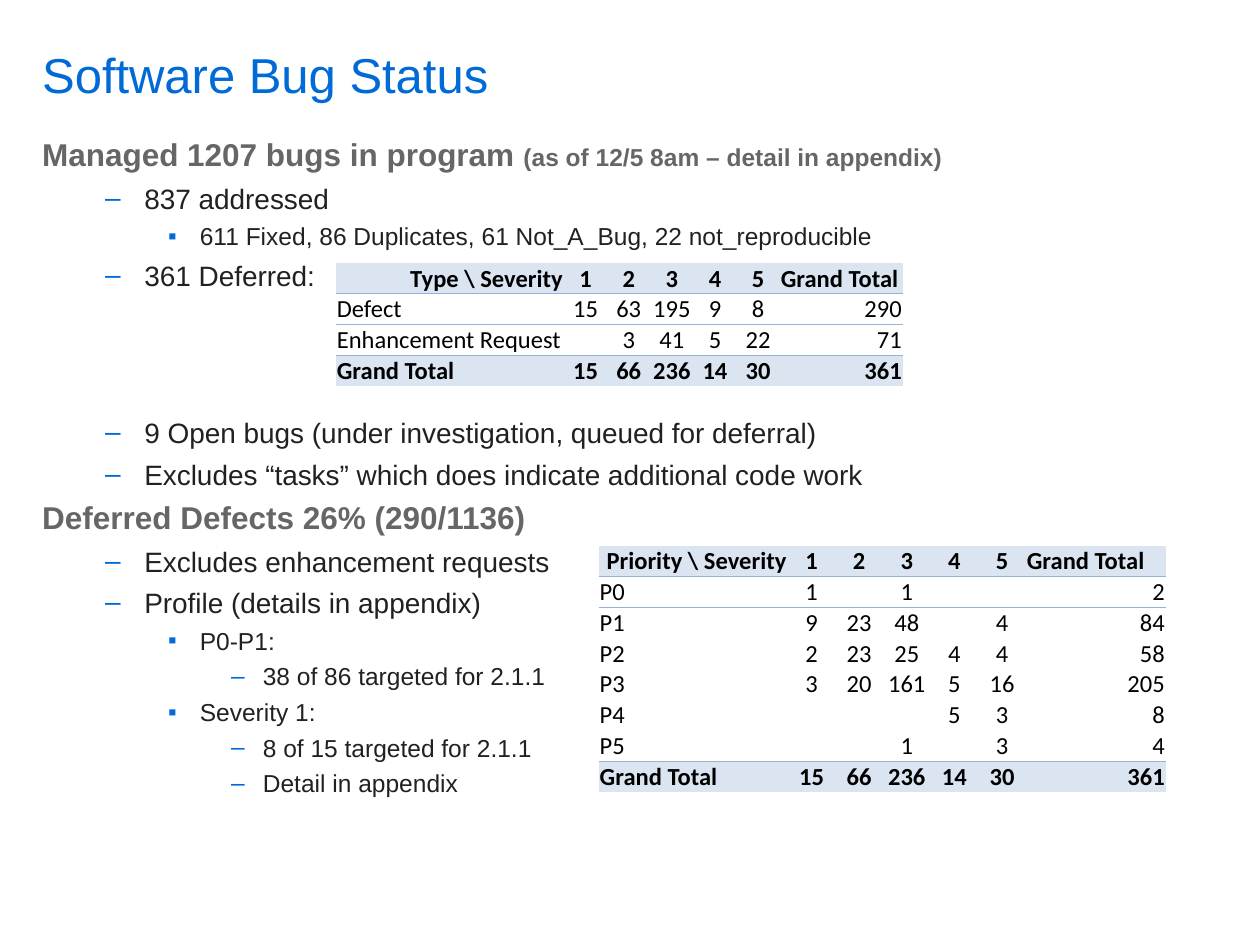
from dataclasses import dataclass
from lxml.etree import SubElement as Sub
from pptx import Presentation as Deck
from pptx.dml.color import RGBColor as Rgb
from pptx.enum.text import MSO_ANCHOR as Anchor, PP_ALIGN as Align
from pptx.oxml.ns import qn
from pptx.util import Cm, Pt


@dataclass(frozen=True)
class Theme:
    blue: str = "006AD6"
    gray: str = "666666"
    ink: str = "212121"
    black: str = "000000"
    band: str = "DBE5F1"
    rule: str = "95B3D7"
    sans: str = "Arial"
    grid: str = "Calibri"
    title: int = 28
    head: int = 18
    item: int = 16
    small: int = 14


LEVELS = {
    1: ("–", 2.06, 0.79),
    2: ("▪", 3.18, 0.64),
    3: ("–", 4.45, 0.64),
}
GAPS = {18: 4.5, 16: 4.5, 14: 3.6}
PLAIN = "{2D5ABB26-0587-4C30-8999-92F81FD0307C}"


class Page:
    def __init__(self, deck, theme):
        self.theme = theme
        self.slide = deck.slides.add_slide(deck.slide_layouts[5])

    def run(self, para, text, size, color, face, bold=False):
        run = para.add_run()
        run.text = text
        font = run.font
        font.size, font.name, font.bold = Pt(size), face, bold
        font.color.rgb = Rgb.from_string(color)

    def frame(self, shape, anchor):
        frame = shape.text_frame
        frame.word_wrap = True
        frame.vertical_anchor = anchor
        frame.margin_left = frame.margin_right = 0
        frame.margin_top = frame.margin_bottom = 0
        return frame

    def title(self, text, left, top, width, height):
        shape = self.slide.shapes.title
        shape.left, shape.top = Cm(left), Cm(top)
        shape.width, shape.height = Cm(width), Cm(height)
        para = self.frame(shape, Anchor.MIDDLE).paragraphs[0]
        para.alignment = Align.LEFT
        self.run(para, text, self.theme.title, self.theme.blue, self.theme.sans)

    def bullet(self, para, level):
        mark, left, hang = LEVELS[level]
        para.level = level
        props = para._p.get_or_add_pPr()
        props.set("marL", str(Cm(left)))
        props.set("indent", str(-Cm(hang)))
        tint = Sub(props, qn("a:buClr"))
        Sub(tint, qn("a:srgbClr"), val=self.theme.blue)
        Sub(props, qn("a:buFont"), typeface=self.theme.sans)
        Sub(props, qn("a:buChar"), char=mark)

    def outline(self, items, left, top, width, height):
        look = self.theme
        box = self.slide.shapes.add_textbox(Cm(left), Cm(top), Cm(width), Cm(height))
        frame = self.frame(box, Anchor.TOP)
        sizes = (look.head, look.item, look.small, look.small)
        for spot, (level, text, *more) in enumerate(items):
            para = frame.add_paragraph() if spot else frame.paragraphs[0]
            size = sizes[level]
            if level:
                self.bullet(para, level)
            if spot:
                para.space_before = Pt(more[0] if level and more else GAPS[size])
            color = look.ink if level else look.gray
            self.run(para, text, size, color, look.sans, not level)
            if more and not level:
                self.run(para, more[0], look.small, color, look.sans, True)

    def edge(self, cell, sides):
        props = cell._tc.get_or_add_tcPr()
        for spot, side in enumerate(sides):
            line = Sub(props, qn(f"a:ln{side}"), w=str(Pt(0.5)))
            fill = Sub(line, qn("a:solidFill"))
            Sub(fill, qn("a:srgbClr"), val=self.theme.rule)
            props.insert(spot, line)

    def cell(self, cell, text, align, strong):
        look = self.theme
        cell.margin_left = cell.margin_right = cell.margin_top = Cm(0.02)
        cell.margin_bottom = 0
        cell.vertical_anchor = Anchor.BOTTOM
        if strong:
            cell.fill.solid()
            cell.fill.fore_color.rgb = Rgb.from_string(look.band)
        else:
            cell.fill.background()
        para = cell.text_frame.paragraphs[0]
        para.alignment = align
        if text:
            self.run(para, text, look.small, look.black, look.grid, strong)
        else:
            Sub(para._p, qn("a:endParaRPr"), sz=str(look.small * 100))

    def table(self, rows, left, top, widths, high=0.62):
        last, end = len(rows) - 1, len(widths) - 1
        shape = self.slide.shapes.add_table(
            len(rows), len(widths), Cm(left), Cm(top),
            Cm(sum(widths)), Cm(high * len(rows)))
        table = shape.table
        table.first_row = table.horz_banding = False
        table._tbl.tblPr.find(qn("a:tableStyleId")).text = PLAIN
        for col, width in zip(table.columns, widths):
            col.width = Cm(width)
        for r, row in enumerate(rows):
            table.rows[r].height = Cm(high)
            sides = "T" * (r in (1, last)) + "B" * (r in (0, last - 1))
            for c, text in enumerate(row):
                align = Align.CENTER
                if c in (0, end):
                    align = Align.RIGHT if (c == 0) == (r == 0) else Align.LEFT
                cell = table.cell(r, c)
                self.cell(cell, text, align, r in (0, last))
                self.edge(cell, sides)


ITEMS = [
    (0, "Managed 1207 bugs in program ", "(as of 12/5 8am – detail in appendix)"),
    (1, "837 addressed"),
    (2, "611 Fixed, 86 Duplicates, 61 Not_A_Bug, 22 not_reproducible"),
    (1, "361 Deferred:"),
    (1, "9 Open bugs (under investigation, queued for deferral)", 70.7),
    (1, "Excludes “tasks” which does indicate additional code work"),
    (0, "Deferred Defects 26% (290/1136)"),
    (1, "Excludes enhancement requests"),
    (1, "Profile (details in appendix)"),
    (2, "P0-P1:"),
    (3, "38 of 86 targeted for 2.1.1"),
    (2, "Severity 1:"),
    (3, "8 of 15 targeted for 2.1.1"),
    (3, "Detail in appendix"),
]
HEAD = ["1", "2", "3", "4", "5", "Grand Total"]
TOTAL = ["Grand Total", "15", "66", "236", "14", "30", "361"]
TYPES = [
    ["Type \\ Severity", *HEAD],
    ["Defect", "15", "63", "195", "9", "8", "290"],
    ["Enhancement Request", "", "3", "41", "5", "22", "71"],
    TOTAL,
]
RANKS = [
    ["Priority \\ Severity", *HEAD],
    ["P0", "1", "", "1", "", "", "2"],
    ["P1", "9", "23", "48", "", "4", "84"],
    ["P2", "2", "23", "25", "4", "4", "58"],
    ["P3", "3", "20", "161", "5", "16", "205"],
    ["P4", "", "", "", "5", "3", "8"],
    ["P5", "", "", "1", "", "3", "4"],
    TOTAL,
]


def main():
    deck = Deck()
    deck.slide_width, deck.slide_height = Cm(25.4), Cm(19.05)
    page = Page(deck, Theme())
    page.title("Software Bug Status", 0.85, 0.53, 23.7, 1.9)
    page.outline(ITEMS, 0.85, 2.73, 23.7, 13.5)
    page.table(TYPES, 6.77, 5.3, [4.6] + [0.87] * 5 + [2.48])
    page.table(RANKS, 12.07, 11, [3.81] + [0.96] * 5 + [2.82])
    deck.save("out.pptx")


if __name__ == "__main__":
    main()
